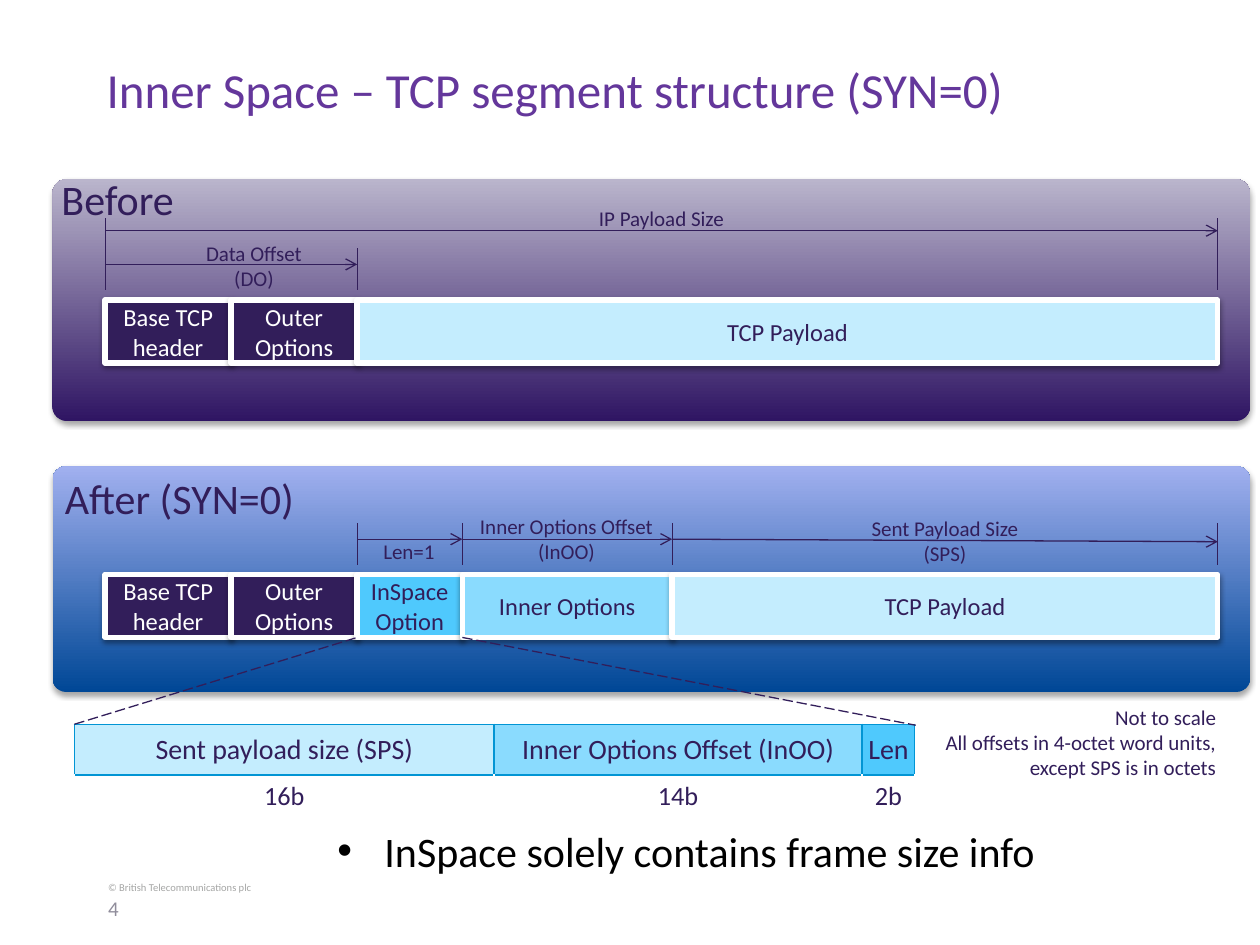
from itertools import accumulate

from lxml import etree
from pptx import Presentation
from pptx.dml.color import RGBColor
from pptx.enum.dml import MSO_LINE
from pptx.enum.shapes import MSO_CONNECTOR, MSO_SHAPE
from pptx.enum.text import MSO_ANCHOR, PP_ALIGN
from pptx.oxml.ns import qn
from pptx.util import Cm, Pt

STRAIGHT = MSO_CONNECTOR.STRAIGHT
RECTANGLE, ROUNDED = MSO_SHAPE.RECTANGLE, MSO_SHAPE.ROUNDED_RECTANGLE
LEFT, CENTER, RIGHT = PP_ALIGN.LEFT, PP_ALIGN.CENTER, PP_ALIGN.RIGHT
TOP, MIDDLE = MSO_ANCHOR.TOP, MSO_ANCHOR.MIDDLE
LONG_DASH = MSO_LINE.LONG_DASH

INK, WHITE, BORDER = "321E5A", "FFFFFF", "0295D4"
PALE, LIGHT, BRIGHT = "C4EDFE", "8ADBFE", "4FC9FD"


def rgb(value):
    return RGBColor.from_string(value)


def add_element(parent, tag, **attributes):
    return etree.SubElement(parent, qn(tag), attributes)


def write(frame, text, size=12, color=INK, align=LEFT, anchor=TOP, wrap=False, bullet=False):
    """Fill a text frame; text is a string or a list with one string per paragraph."""
    frame.word_wrap = wrap
    frame.vertical_anchor = anchor
    for index, content in enumerate([text] if isinstance(text, str) else text):
        paragraph = frame.add_paragraph() if index else frame.paragraphs[0]
        paragraph.text = content
        paragraph.alignment = align
        if bullet:
            properties = paragraph._p.get_or_add_pPr()
            properties.set("marL", str(Cm(0.95)))
            properties.set("indent", str(-Cm(0.95)))
            add_element(properties, "a:buFont", typeface="Arial")
            add_element(properties, "a:buChar", char="•")
        for run in paragraph.runs:
            run.font.name = "Calibri"
            run.font.size = Pt(size)
            run.font.color.rgb = rgb(color)


class SlideBuilder:
    def __init__(self, slide):
        self.shapes = slide.shapes

    def text(self, text, left, top, width, height, **style):
        box = self.shapes.add_textbox(Cm(left), Cm(top), Cm(width), Cm(height))
        write(box.text_frame, text, **style)

    def shadow(self, shape, distance, opacity):
        """Add a soft shadow below the shape."""
        effects = add_element(shape._element.spPr, "a:effectLst")
        shadow = add_element(effects, "a:outerShdw", blurRad=str(Pt(3.1)), dist=str(Pt(distance)),
                             dir="5400000", rotWithShape="0")
        black = add_element(shadow, "a:srgbClr", val="000000")
        add_element(black, "a:alpha", val=str(opacity * 1000))

    def panel(self, top, height, bottom_color, top_color):
        shape = self.shapes.add_shape(ROUNDED, Cm(1.06), Cm(top), Cm(24.14), Cm(height))
        shape.adjustments[0] = 0.06
        shape.fill.gradient()
        shape.fill.gradient_angle = 90
        for stop, position, color in zip(shape.fill.gradient_stops, (0, 1), (bottom_color, top_color)):
            stop.position = position
            stop.color.rgb = rgb(color)
        shape.line.fill.background()
        self.shadow(shape, 1.8, 35)

    def segment(self, left, top, fields):
        """Lay (text, width, fill, text colour) fields side by side."""
        for text, width, fill, color in fields:
            shape = self.shapes.add_shape(RECTANGLE, Cm(left), Cm(top), Cm(width), Cm(1.27))
            shape.fill.solid()
            shape.fill.fore_color.rgb = rgb(fill)
            shape.line.color.rgb = rgb(WHITE)
            shape.line.width = Pt(3)
            self.shadow(shape, 1.6, 38)
            frame = shape.text_frame
            frame.margin_left = frame.margin_right = 0
            write(frame, text, size=14, color=color, align=CENTER, anchor=MIDDLE, wrap=True)
            left += width

    def line(self, x1, y1, x2, y2, arrow=False, dash=None):
        connector = self.shapes.add_connector(STRAIGHT, Cm(x1), Cm(y1), Cm(x2), Cm(y2))
        connector.line.color.rgb = rgb(INK)
        connector.line.width = Pt(0.75)
        if dash:
            connector.line.dash_style = dash
        if arrow:
            add_element(connector.line._get_or_add_ln(), "a:tailEnd", type="arrow")
        add_element(connector._element.spPr, "a:effectLst")

    def table(self, left, top, columns, heights):
        """Draw one column per (name, bits, width, fill): a filled name above its bit count."""
        table = self.shapes.add_table(2, len(columns), Cm(left), Cm(top),
                                      Cm(sum(column[2] for column in columns)),
                                      Cm(sum(heights))).table
        table.first_row = table.horz_banding = False
        for row, height in zip(table.rows, heights):
            row.height = Cm(height)
        for index, (name, bits, width, fill) in enumerate(columns):
            table.columns[index].width = Cm(width)
            self.cell(table.cell(0, index), name, 16, ("L", "R", "T", "B"), fill)
            self.cell(table.cell(1, index), bits, 15, ("T",))

    def cell(self, cell, text, size, sides, fill=None):
        cell.margin_left = cell.margin_right = cell.margin_top = cell.margin_bottom = 0
        properties = cell._tc.get_or_add_tcPr()
        for side in sides:
            border = add_element(properties, f"a:ln{side}", w=str(Pt(1)))
            add_element(add_element(border, "a:solidFill"), "a:srgbClr", val=BORDER)
        if fill:
            cell.fill.solid()
            cell.fill.fore_color.rgb = rgb(fill)
        else:
            cell.fill.background()
        write(cell.text_frame, text, size=size, align=CENTER, wrap=True)
        cell.vertical_anchor = MIDDLE


def main():
    presentation = Presentation()
    presentation.slide_width, presentation.slide_height = Cm(25.4), Cm(19.05)
    builder = SlideBuilder(presentation.slides.add_slide(presentation.slide_layouts[6]))

    builder.text("© British Telecommunications plc", 1.93, 17.63, 3.84, 0.89, size=6, color="A5A6A5")
    builder.panel(9.4, 4.55, "004796", "A1B0EF")
    builder.panel(3.61, 4.88, "2F1563", "BAB5CC")
    builder.text("Inner Space – TCP segment structure (SYN=0)", 1.9, 1.07, 21.6, 2.74,
                 size=28, color="64379B", wrap=True)

    start = 2.12
    headers = [("Base TCP header", 2.54, INK, WHITE), ("Outer Options", 2.54, INK, WHITE)]
    after = headers + [("InSpace Option", 2.12, BRIGHT, INK), ("Inner Options", 4.23, LIGHT, INK),
                       ("TCP Payload", 11, PALE, INK)]
    edges = list(accumulate((field[1] for field in after), initial=start))
    options_end, inspace_end, inner_end, end = edges[2:]
    before = headers + [("TCP Payload", end - options_end, PALE, INK)]

    builder.table(1.5, 14.6, [("Sent payload size (SPS)", "16b", 8.46, PALE),
                              ("Inner Options Offset (InOO)", "14b", 7.42, LIGHT),
                              ("Len", "2b", 1.06, BRIGHT)], (1.02, 0.89))
    builder.segment(start, 11.58, after)
    builder.segment(start, 6.05, before)

    for x in edges[2:]:
        builder.line(x, 11.38, x, 10.54)
    for x, top in ((start, 4.39), (options_end, 5), (end, 4.39)):
        builder.line(x, 5.84, x, top)
    for x1, x2, y1, y2 in ((options_end, inspace_end, 10.87, 10.87),
                           (inspace_end, inner_end, 10.87, 10.87),
                           (inner_end, end, 10.87, 10.92),
                           (start, options_end, 5.33, 5.33),
                           (start, end, 4.65, 4.65)):
        builder.line(x1, y1, x2, y2, arrow=True)
    builder.line(1.5, 14.6, options_end, 12.85, dash=LONG_DASH)
    builder.line(inspace_end, 12.85, 18.46, 14.62, dash=LONG_DASH)

    for text, left, top, width, height in (
            ("Len=1", 7.47, 10.74, 1.55, 0.77),
            ("Inner Options Offset\n(InOO)", 9.4, 10.23, 4.04, 1.28),
            ("Sent Payload Size\n(SPS)", 17.3, 10.27, 3.5, 1.28),
            ("Data Offset\n(DO)", 3.89, 4.72, 2.46, 1.28),
            ("IP Payload Size", 11.81, 4.01, 3.05, 0.77)):
        builder.text(text, left, top, width, height, align=CENTER)
    builder.text(["Not to scale", "All offsets in 4-octet word units,\nexcept SPS is in octets"],
                 18.72, 14.07, 6.05, 1.8, align=RIGHT)
    builder.text("Before", 0.99, 3.38, 2.79, 1.28, size=24)
    builder.text("After (SYN=0)", 1.06, 9.4, 5.18, 1.28, size=24)
    builder.text("InSpace solely contains frame size info", 6.55, 16.51, 16.94, 1.47,
                 size=24, color="000000", wrap=True, bullet=True)
    builder.text("4", 1.93, 18.01, 1.04, 0.61, color="908D9B", anchor=MIDDLE, wrap=True)

    presentation.save("out.pptx")


if __name__ == "__main__":
    main()
